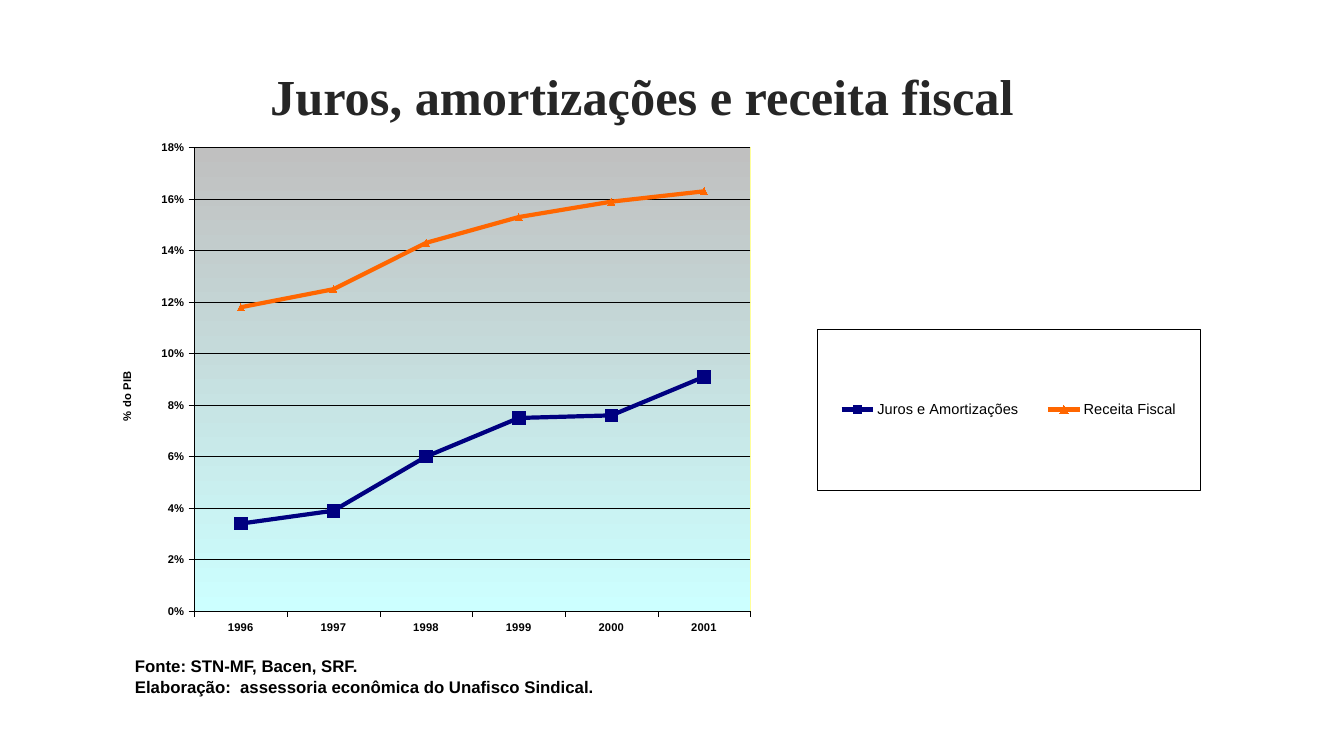
"""Build a slide that compares debt service with tax revenue in a line chart."""
from pptx import Presentation
from pptx.chart.data import CategoryChartData
from pptx.dml.color import RGBColor
from pptx.enum.chart import XL_CHART_TYPE as ChartType, XL_LEGEND_POSITION as LegendSide
from pptx.enum.chart import XL_MARKER_STYLE as Marker, XL_TICK_MARK as Tick
from pptx.enum.text import MSO_ANCHOR as Anchor, PP_ALIGN as Align
from pptx.oxml import parse_xml
from pptx.oxml.ns import nsdecls, qn
from pptx.util import Pt

BLACK = RGBColor(0x00, 0x00, 0x00)
CHARCOAL = RGBColor(0x26, 0x26, 0x26)
NAVY = RGBColor(0x00, 0x00, 0x80)
ORANGE = RGBColor(0xFF, 0x66, 0x00)
SILVER = RGBColor(0xC0, 0xC0, 0xC0)
PALE_CYAN = RGBColor(0xCC, 0xFF, 0xFF)
PALE_YELLOW = RGBColor(0xFF, 0xFF, 0x99)

YEARS = ["1996", "1997", "1998", "1999", "2000", "2001"]
SERIES = [
    ("Juros e Amortizações", (0.034, 0.039, 0.06, 0.075, 0.076, 0.091), NAVY, Marker.SQUARE, 9),
    ("Receita Fiscal", (0.118, 0.125, 0.143, 0.153, 0.159, 0.163), ORANGE, Marker.TRIANGLE, 5),
]
SOURCE_LINES = [
    "Fonte: STN-MF, Bacen, SRF.",
    "Elaboração:  assessoria econômica do Unafisco Sindical.",
]


def style_font(font, name, size, color, bold):
    """Set the face, size, colour and weight of a font."""
    font.name, font.size, font.bold = name, Pt(size), bold
    font.color.rgb = color


def add_text(page, area, lines, name, size, color, align, anchor, spacing):
    """Add a bold text box with one paragraph for each line."""
    box = page.shapes.add_textbox(*map(Pt, area))
    frame = box.text_frame
    frame.word_wrap = True
    frame.vertical_anchor = anchor
    for index, line in enumerate(lines):
        para = frame.add_paragraph() if index else frame.paragraphs[0]
        para.alignment = align
        para.line_spacing = spacing
        span = para.add_run()
        span.text = line
        style_font(span.font, name, size, color, True)


def place_part(part, before, **place):
    """Give a chart part a manual layout, after the named child or first."""
    for old in part.findall(qn("c:layout")):
        part.remove(old)
    modes = "".join(f'<c:{axis}Mode val="edge"/>' for axis in "xy")
    values = "".join(f'<c:{key} val="{value}"/>' for key, value in place.items())
    target = '<c:layoutTarget val="inner"/>' if before is None else ""
    layout = parse_xml(
        f'<c:layout {nsdecls("c")}><c:manualLayout>{target}{modes}{values}'
        "</c:manualLayout></c:layout>"
    )
    if before is None:
        part.insert(0, layout)
    else:
        part.find(qn(before)).addnext(layout)


def frame_properties(fill, line_color):
    """Return shape properties with the given fill and a hairline border."""
    return parse_xml(
        f'<c:spPr {nsdecls("c", "a")}>{fill}<a:ln w="{Pt(0.25)}"><a:solidFill>'
        f'<a:srgbClr val="{line_color}"/></a:solidFill></a:ln></c:spPr>'
    )


def style_hairline(line):
    """Make a chart line thin and black."""
    line.color.rgb = BLACK
    line.width = Pt(0.25)


def style_axis(axis):
    """Set the ticks, line and labels of an axis."""
    axis.major_tick_mark = Tick.OUTSIDE
    axis.minor_tick_mark = Tick.NONE
    style_hairline(axis.format.line)
    style_font(axis.tick_labels.font, "Arial", 8, BLACK, True)


def style_value_axis(axis):
    """Set the scale, grid and title of the value axis."""
    axis.minimum_scale, axis.maximum_scale, axis.major_unit = 0, 0.18, 0.02
    axis.tick_labels.number_format = "0%"
    axis.tick_labels.number_format_is_linked = False
    axis.has_major_gridlines = True
    style_hairline(axis.major_gridlines.format.line)
    title = axis.axis_title
    span = title.text_frame.paragraphs[0].add_run()
    span.text = "% do PIB"
    style_font(span.font, "Arial", 8, BLACK, True)
    place_part(title._element, "c:tx", x=0.01, y=0.46)


def style_plot_area(area):
    """Place the plot area and fill it with a vertical gradient."""
    place_part(area, None, x=0.077, y=0.032, w=0.483, h=0.895)
    stops = "".join(
        f'<a:gs pos="{position}"><a:srgbClr val="{color}"/></a:gs>'
        for position, color in ((0, SILVER), (100000, PALE_CYAN))
    )
    fill = f'<a:gradFill><a:gsLst>{stops}</a:gsLst><a:lin ang="5400000" scaled="0"/></a:gradFill>'
    area.append(frame_properties(fill, PALE_YELLOW))


def style_legend(chart):
    """Show a framed legend to the right of the plot."""
    chart.has_legend = True
    legend = chart.legend
    legend.position = LegendSide.RIGHT
    legend.include_in_layout = False
    style_font(legend.font, "Arial", 10.4, BLACK, False)
    place_part(legend._element, "c:legendPos", x=0.618, y=0.382, w=0.333, h=0.311)
    legend._element.find(qn("c:overlay")).addnext(frame_properties("<a:noFill/>", BLACK))


def add_line_chart(page, area):
    """Add the line chart with its series, axes and legend."""
    data = CategoryChartData(number_format="0.0%")
    data.categories = YEARS
    for name, values, *_ in SERIES:
        data.add_series(name, values)
    chart = page.shapes.add_chart(ChartType.LINE_MARKERS, *map(Pt, area), data).chart
    chart.has_title = False
    style_font(chart.font, "Arial", 11.3, BLACK, False)
    chart.plots[0].vary_by_categories = False
    for series, (_, _, color, marker, size) in zip(chart.plots[0].series, SERIES):
        series.smooth = False
        series.format.line.color.rgb = color
        series.format.line.width = Pt(3)
        series.marker.style, series.marker.size = marker, size
        series.marker.format.fill.solid()
        series.marker.format.fill.fore_color.rgb = color
        series.marker.format.line.color.rgb = color
    style_axis(chart.category_axis)
    style_axis(chart.value_axis)
    style_value_axis(chart.value_axis)
    style_plot_area(chart._chartSpace.find(".//" + qn("c:plotArea")))
    style_legend(chart)


def main():
    """Build the deck and save it."""
    deck = Presentation()
    deck.slide_width, deck.slide_height = Pt(960), Pt(540)
    page = deck.slides.add_slide(deck.slide_layouts[6])
    add_text(page, (72, 36, 773.3, 57.6), ["Juros, amortizações e receita fiscal"],
             "Times New Roman", 36, CHARCOAL, Align.CENTER, Anchor.BOTTOM, 1.0)
    add_line_chart(page, (75.6, 93.6, 822.2, 370.1))
    add_text(page, (89.3, 463.7, 768.2, 38.2), SOURCE_LINES,
             "Arial", 12, BLACK, Align.JUSTIFY, Anchor.TOP, 1.07)
    deck.save("out.pptx")


if __name__ == "__main__":
    main()
